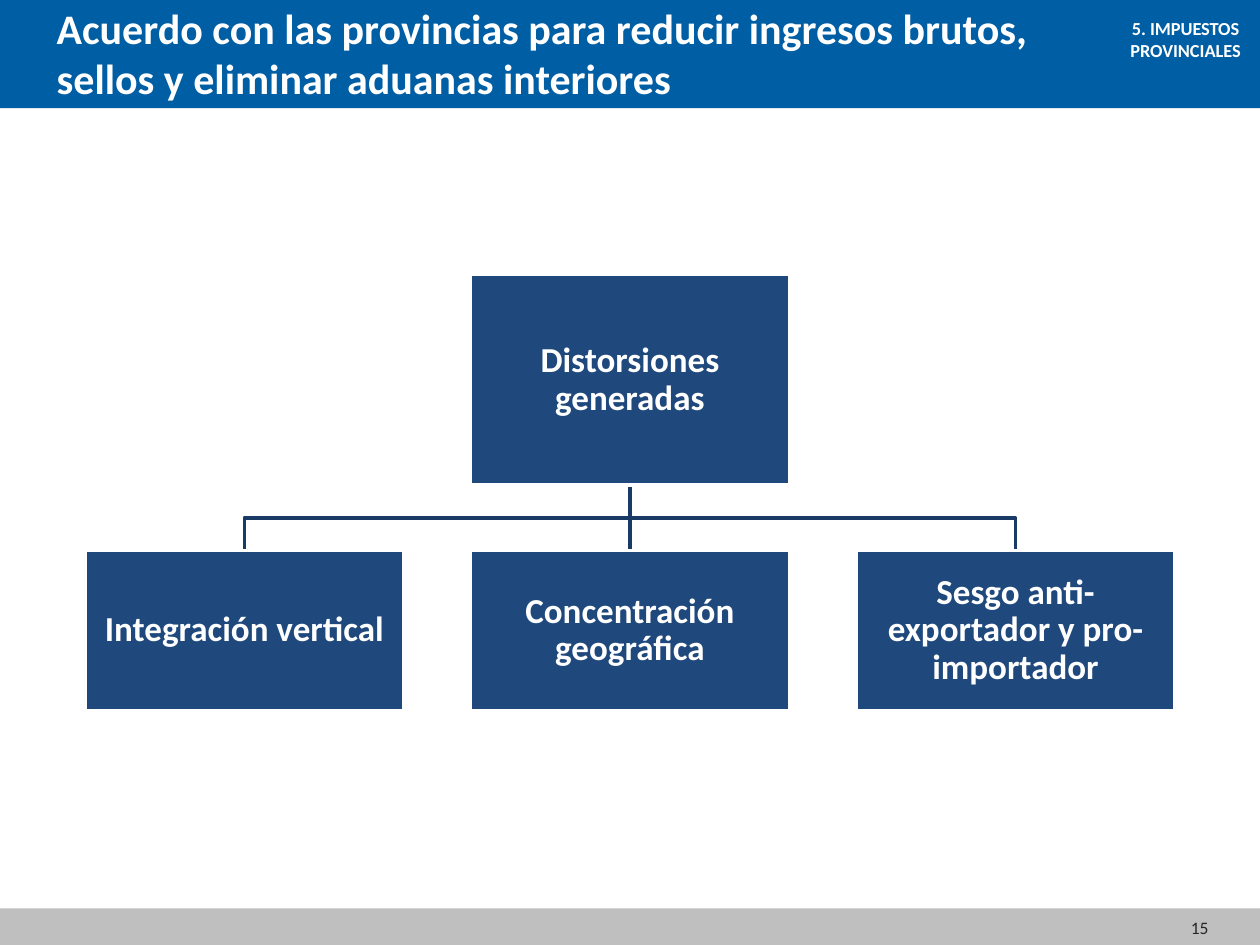
"""Builds the slide on the distortions caused by provincial taxes."""
from lxml.etree import SubElement
from pptx import Presentation
from pptx.dml.color import RGBColor
from pptx.enum.shapes import MSO_CONNECTOR, MSO_SHAPE
from pptx.enum.text import MSO_ANCHOR as ANCHOR, MSO_AUTO_SIZE, PP_ALIGN as ALIGN
from pptx.oxml.ns import qn
from pptx.util import Inches, Pt


def rgb(value):
    return RGBColor.from_string(value)


def write(shape, text, size, color, align, anchor=ANCHOR.TOP, bold=True):
    frame = shape.text_frame
    frame.text = text
    frame.word_wrap = True
    frame.auto_size = MSO_AUTO_SIZE.NONE
    frame.vertical_anchor = anchor
    paragraph = frame.paragraphs[0]
    paragraph.alignment = align
    paragraph.font.name = "Calibri"
    paragraph.font.size = Pt(size)
    paragraph.font.bold = bold
    paragraph.font.color.rgb = rgb(color)
    return frame


WHITE, NAVY, LINK = "FFFFFF", "1F497D", "193A64"

prs = Presentation()
prs.slide_width, prs.slide_height = Inches(10), Inches(7.5)
slide = prs.slides.add_slide(prs.slide_layouts[5])
shapes = slide.shapes

for top, height, color in [(0, 0.86, "005EA4"), (7.21, 0.29, "BFBFBF")]:
    band = shapes.add_shape(MSO_SHAPE.RECTANGLE, 0, Inches(top), Inches(10), Inches(height))
    band.shadow.inherit = False
    band.fill.solid()
    band.fill.fore_color.rgb = rgb(color)
    band.line.fill.background()

title = shapes.title
band.element.addnext(title.element)
title.left, title.top = Inches(0.35), Inches(-0.03)
title.width, title.height = Inches(8.66), Inches(0.91)
write(title, "Acuerdo con las provincias para reducir ingresos brutos, "
      "sellos y eliminar aduanas interiores", 24, WHITE, ALIGN.LEFT)

section = shapes.add_textbox(Inches(8.78), Inches(0.09), Inches(1.26), Inches(0.45))
write(section, "5. IMPUESTOS PROVINCIALES", 10.5, WHITE, ALIGN.CENTER)

page = shapes.add_textbox(Inches(7.36), Inches(7.16), Inches(2.33), Inches(0.4))
write(page, "15", 10, "262626", ALIGN.RIGHT, ANCHOR.MIDDLE, bold=False)

box_width, center, spacing = 2.53, 5, 3.06
root_bottom, branch, child_top = 3.84, 4.11, 4.37

trunk = shapes.add_connector(MSO_CONNECTOR.STRAIGHT, Inches(center), Inches(root_bottom),
                             Inches(center), Inches(child_top))
SubElement(trunk.element.spPr, qn("a:effectLst"))
links = [trunk]
for end in (center - spacing, center + spacing):
    builder = shapes.build_freeform(Inches(center), Inches(root_bottom))
    bends = [(center, branch), (end, branch), (end, child_top)]
    builder.add_line_segments([(Inches(x), Inches(y)) for x, y in bends], close=False)
    elbow = builder.convert_to_shape()
    elbow.shadow.inherit = False
    elbow.fill.background()
    links.append(elbow)
for link in links:
    link.line.color.rgb = rgb(LINK)
    link.line.width = Pt(2)

distortions = [
    ("Distorsiones generadas", 0, 2.18, 1.67),
    ("Integración vertical", -1, child_top, 1.27),
    ("Concentración geográfica", 0, child_top, 1.27),
    ("Sesgo anti-exportador y pro-importador", 1, child_top, 1.27),
]
for label, column, top, height in distortions:
    left = center + column * spacing - box_width / 2
    box = shapes.add_shape(MSO_SHAPE.RECTANGLE, Inches(left), Inches(top),
                           Inches(box_width), Inches(height))
    box.shadow.inherit = False
    box.fill.solid()
    box.fill.fore_color.rgb = rgb(NAVY)
    box.line.color.rgb = rgb(WHITE)
    box.line.width = Pt(2)
    frame = write(box, label, 20, WHITE, ALIGN.CENTER, ANCHOR.MIDDLE)
    frame.margin_left = frame.margin_right = Inches(0.01)
    frame.margin_top = frame.margin_bottom = Inches(0.01)
    frame.paragraphs[0].line_spacing = 0.9

prs.save("out.pptx")
